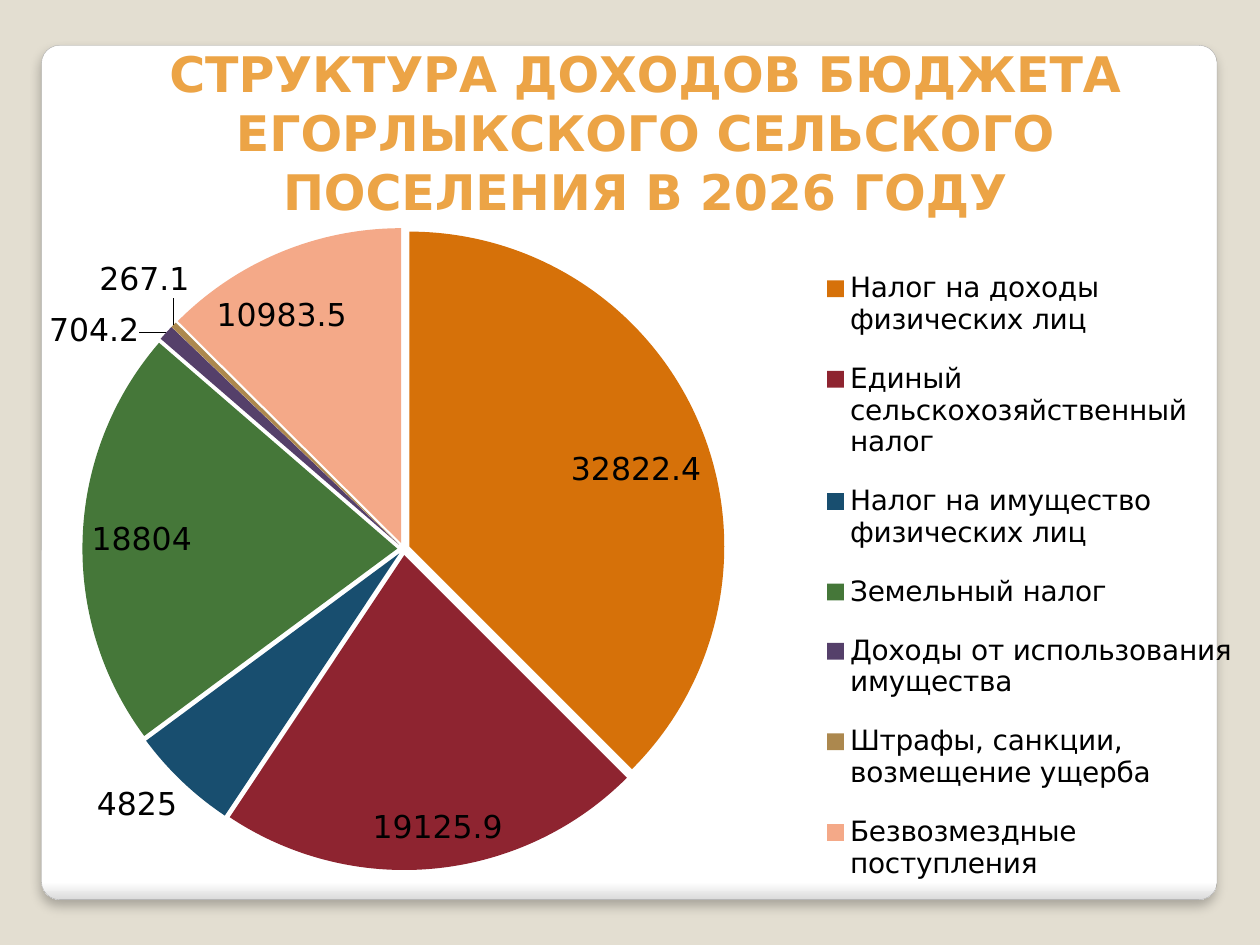
from lxml.etree import SubElement
from pptx import Presentation
from pptx.chart.data import CategoryChartData
from pptx.dml.color import RGBColor
from pptx.enum.chart import XL_CHART_TYPE as ChartType
from pptx.enum.chart import XL_LABEL_POSITION as LabelPosition
from pptx.enum.chart import XL_LEGEND_POSITION as LegendPosition
from pptx.enum.shapes import MSO_SHAPE as Shape
from pptx.enum.text import MSO_ANCHOR as Anchor
from pptx.enum.text import PP_ALIGN as Align
from pptx.oxml import parse_xml
from pptx.oxml.ns import nsdecls, qn
from pptx.util import Inches, Pt


class Theme:
    font = "DejaVu Sans"
    background, panel, panel_edge, outline = "E3DED1", "FFFFFF", "DADADA", "A4A4A4"
    title, text = "ECA446", "000000"
    title_size, label_size, legend_size = 28, 18, 16


# Income source, amount, slice colour
INCOME = [
    ("Налог на доходы физических лиц", 32822.4, "D67109"),
    ("Единый сельскохозяйственный налог", 19125.9, "8E2430"),
    ("Налог на имущество физических лиц", 4825, "184E6F"),
    ("Земельный налог", 18804, "457739"),
    ("Доходы от использования имущества", 704.2, "55406A"),
    ("Штрафы, санкции, возмещение ущерба", 267.1, "AC884E"),
    ("Безвозмездные поступления", 10983.5, "F4A988"),
]
PLOT_AREA = {"x": 0.009, "y": 0.005, "w": 0.614, "h": 0.912}
LEGEND_AREA = {"x": 0.65, "y": 0.03, "w": 0.35, "h": 0.94}


def color(code):
    return RGBColor.from_string(code)


def add_layout(parent, area, inner=False):
    """Gives a chart part a fixed place, in fractions of the chart."""
    layout = parent.find(qn("c:layout"))
    if layout is None:
        layout = parse_xml(f"<c:layout {nsdecls('c')}/>")
        before = parent.find(qn("c:legendPos"))
        if before is None:
            parent.insert(0, layout)
        else:
            before.addnext(layout)
    manual = SubElement(layout, qn("c:manualLayout"))
    values = {"layoutTarget": "inner"} if inner else {}
    values.update(xMode="edge", yMode="edge", **area)
    for name, value in values.items():
        SubElement(manual, qn(f"c:{name}")).set("val", str(value))


class SlideBuilder:
    def __init__(self, deck, theme):
        self.theme = theme
        self.page = deck.slides.add_slide(deck.slide_layouts[5])
        fill = self.page.background.fill
        fill.solid()
        fill.fore_color.rgb = color(theme.background)

    def style_font(self, font, size, code, bold=False):
        style = {"name": self.theme.font, "size": Pt(size), "bold": bold}
        for name, value in style.items():
            setattr(font, name, value)
        font.color.rgb = color(code)

    def panel(self, left, top, width, height):
        box = self.page.shapes.add_shape(Shape.ROUNDED_RECTANGLE, left, top, width, height)
        box.adjustments[0] = 0.021
        box.fill.gradient()
        box.fill.gradient_angle = 270
        stops = ((0.98, self.theme.panel), (1, self.theme.panel_edge))
        for stop, (position, code) in zip(box.fill.gradient_stops, stops):
            stop.position = position
            stop.color.rgb = color(code)
        box.line.color.rgb = color(self.theme.outline)
        box.line.width = Pt(0.16)
        # Soft shadow below the panel
        box.shadow.inherit = False
        effects = box._element.spPr.find(qn("a:effectLst"))
        effects.append(parse_xml(
            f'<a:outerShdw {nsdecls("a")} blurRad="{Pt(6)}" dist="{Pt(4)}" dir="5400000">'
            '<a:srgbClr val="000000"><a:alpha val="25000"/></a:srgbClr></a:outerShdw>'))
        # The title placeholder stays in front
        self.page.shapes._spTree.insert(2, box._element)

    def title(self, text, left, top, width, height):
        box = self.page.shapes.title
        place = {"left": left, "top": top, "width": width, "height": height}
        for name, value in place.items():
            setattr(box, name, value)
        frame = box.text_frame
        frame.word_wrap = True
        frame.vertical_anchor = Anchor.MIDDLE
        para = frame.paragraphs[0]
        para.alignment = Align.CENTER
        span = para.add_run()
        span.text = text
        self.style_font(span.font, self.theme.title_size, self.theme.title, bold=True)

    def pie(self, rows, left, top, width, height):
        theme = self.theme
        names, amounts, codes = zip(*rows)
        data = CategoryChartData(number_format="General")
        data.categories = names
        data.add_series("Series 1", amounts)
        chart = self.page.shapes.add_chart(
            ChartType.PIE, left, top, width, height, data).chart
        chart.has_title = False
        self.style_font(chart.font, theme.label_size, theme.text)

        # Slices, slightly pulled apart
        plot = chart.plots[0]
        plot.vary_by_categories = True
        series = plot.series[0]
        for index, code in enumerate(codes):
            fill = series.points[index].format.fill
            fill.solid()
            fill.fore_color.rgb = color(code)
        explosion = parse_xml(f'<c:explosion {nsdecls("c")} val="2"/>')
        series._element.find(qn("c:dPt")).addprevious(explosion)

        # Amounts on the slices
        plot.has_data_labels = True
        labels = plot.data_labels
        labels.show_value = True
        labels.show_percentage = False
        labels.position = LabelPosition.BEST_FIT
        self.style_font(labels.font, theme.label_size, theme.text)

        # Legend on the right
        chart.has_legend = True
        legend = chart.legend
        legend.position = LegendPosition.RIGHT
        legend.include_in_layout = False
        self.style_font(legend.font, theme.legend_size, theme.text)
        add_layout(legend._element, LEGEND_AREA)
        add_layout(chart._chartSpace.chart.plotArea, PLOT_AREA, inner=True)


def main():
    deck = Presentation()
    deck.slide_width, deck.slide_height = Inches(10), Inches(7.5)
    slide = SlideBuilder(deck, Theme)
    slide.panel(Inches(0.33), Inches(0.36), Inches(9.33), Inches(6.78))
    slide.title("СТРУКТУРА ДОХОДОВ БЮДЖЕТА ЕГОРЛЫКСКОГО СЕЛЬСКОГО ПОСЕЛЕНИЯ В 2026 ГОДУ",
                Inches(0.83), Inches(0.29), Inches(8.58), Inches(1.51))
    slide.pie(INCOME, Inches(0.12), Inches(1.78), Inches(9.76), Inches(5.59))
    deck.save("out.pptx")


if __name__ == "__main__":
    main()
